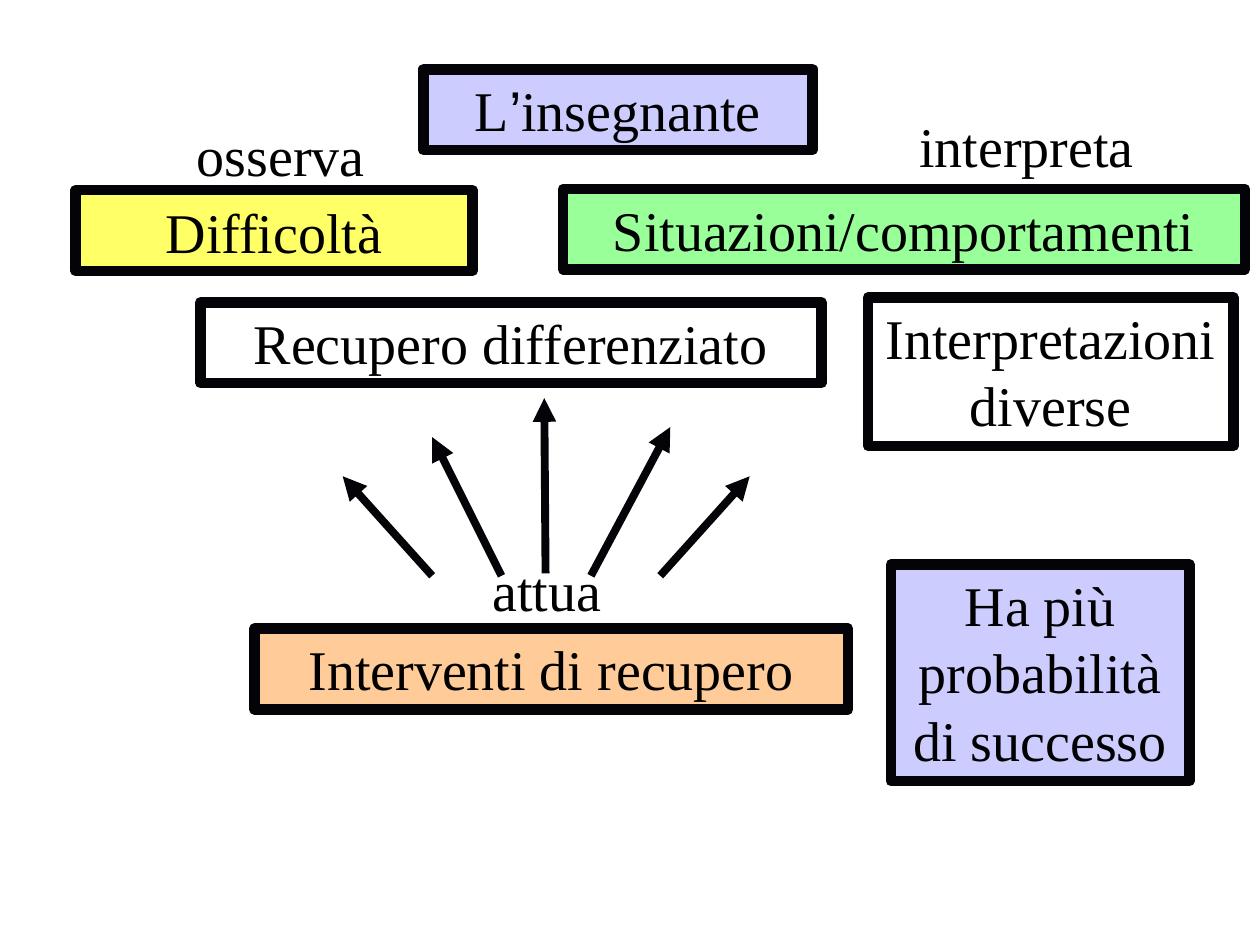
from lxml import etree
from pptx import Presentation
from pptx.dml.color import RGBColor
from pptx.enum.shapes import MSO_CONNECTOR, MSO_SHAPE
from pptx.enum.text import MSO_ANCHOR, MSO_AUTO_SIZE, PP_ALIGN
from pptx.oxml.ns import qn
from pptx.util import Inches, Pt

RECT = MSO_SHAPE.RECTANGLE
STRAIGHT = MSO_CONNECTOR.STRAIGHT
TOP, BOTTOM = MSO_ANCHOR.TOP, MSO_ANCHOR.BOTTOM
CENTER = PP_ALIGN.CENTER
GROW = MSO_AUTO_SIZE.SHAPE_TO_FIT_TEXT

INK, BLACK, WHITE = "040408", "000000", "FFFFFF"
LILAC, YELLOW, GREEN, ORANGE = "CCCCFF", "FFFF66", "99FF99", "FFCC99"
LINE_H = 0.64  # height of a one-line box


def color(value):
    return RGBColor.from_string(value)


def set_text(sp, runs, anchor):
    """Write centred text; runs is a list of (text, font override or None)."""
    tf = sp.text_frame
    tf.word_wrap = True
    tf.auto_size = GROW
    tf.vertical_anchor = anchor
    p = tf.paragraphs[0]
    p.alignment = CENTER
    p.font.name = "Times New Roman"
    p.font.size = Pt(32)
    p.font.color.rgb = color(BLACK)
    for text, font in runs:
        r = p.add_run()
        r.text = text
        if font:
            r.font.name = font


def add_box(shapes, box, runs, fill, anchor=TOP):
    sp = shapes.add_shape(RECT, *map(Inches, box))
    sp.shadow.inherit = False
    sp.fill.solid()
    sp.fill.fore_color.rgb = color(fill)
    sp.line.color.rgb = color(INK)
    sp.line.width = Pt(6)
    set_text(sp, runs, anchor)


def add_label(shapes, box, text):
    sp = shapes.add_textbox(*map(Inches, box))
    set_text(sp, [(text, None)], BOTTOM)


def add_arrow(shapes, start, end):
    c = shapes.add_connector(STRAIGHT, *map(Inches, (*start, *end)))
    c.line.color.rgb = color(INK)
    c.line.width = Pt(4.5)
    etree.SubElement(c.line._get_or_add_ln(), qn("a:tailEnd"), type="triangle")
    etree.SubElement(c._element.spPr, qn("a:effectLst"))


def add_arrow_fan(shapes, box):
    """Five arrows spreading upwards inside the box."""
    left, top, width, height = box
    bottom = top + height
    right = left + width
    arrows = [
        ((left + 0.71, bottom), (left, top + 0.62)),
        ((left + 1.26, bottom), (left + 0.71, top + 0.31)),
        ((left + 1.61, bottom - 0.02), (left + 1.6, top)),
        ((right - 1.26, bottom), (right - 0.63, top + 0.23)),
        ((right - 0.71, bottom), (right, top + 0.62)),
    ]
    for start, end in arrows:
        add_arrow(shapes, start, end)


def build_teacher_map(shapes):
    boxes = [
        ((2.02, 4.99, 4.71, LINE_H), "Interventi di recupero", ORANGE, TOP),
        ((0.6, 1.51, 3.15, LINE_H), "Difficoltà", YELLOW, BOTTOM),
        ((4.47, 1.5, 5.41, LINE_H), "Situazioni/comportamenti", GREEN, TOP),
        ((6.89, 2.36, 2.9, 1.18), "Interpretazioni diverse", WHITE, TOP),
        ((1.59, 2.4, 4.93, LINE_H), "Recupero differenziato", WHITE, TOP),
        ((7.07, 4.48, 2.37, 1.72), "Ha più probabilità di successo", LILAC, TOP),
    ]
    labels = [
        ((0.93, 0.9, 2.6, LINE_H), "osserva"),
        ((6.73, 0.83, 2.84, LINE_H), "interpreta"),
        ((3.04, 4.35, 2.6, LINE_H), "attua"),
    ]
    teacher = [("L", None), ("’", "Arial"), ("insegnante", None)]
    add_box(shapes, (3.36, 0.55, 3.09, LINE_H), teacher, LILAC)
    for box, text, fill, anchor in boxes:
        add_box(shapes, box, [(text, None)], fill, anchor)
    for box, text in labels:
        add_label(shapes, box, text)
    add_arrow_fan(shapes, (2.72, 3.16, 3.23, 1.41))


def main():
    prs = Presentation()
    prs.slide_width, prs.slide_height = Inches(10), Inches(7.5)
    s = prs.slides.add_slide(prs.slide_layouts[6])
    build_teacher_map(s.shapes)
    prs.save("out.pptx")


if __name__ == "__main__":
    main()
